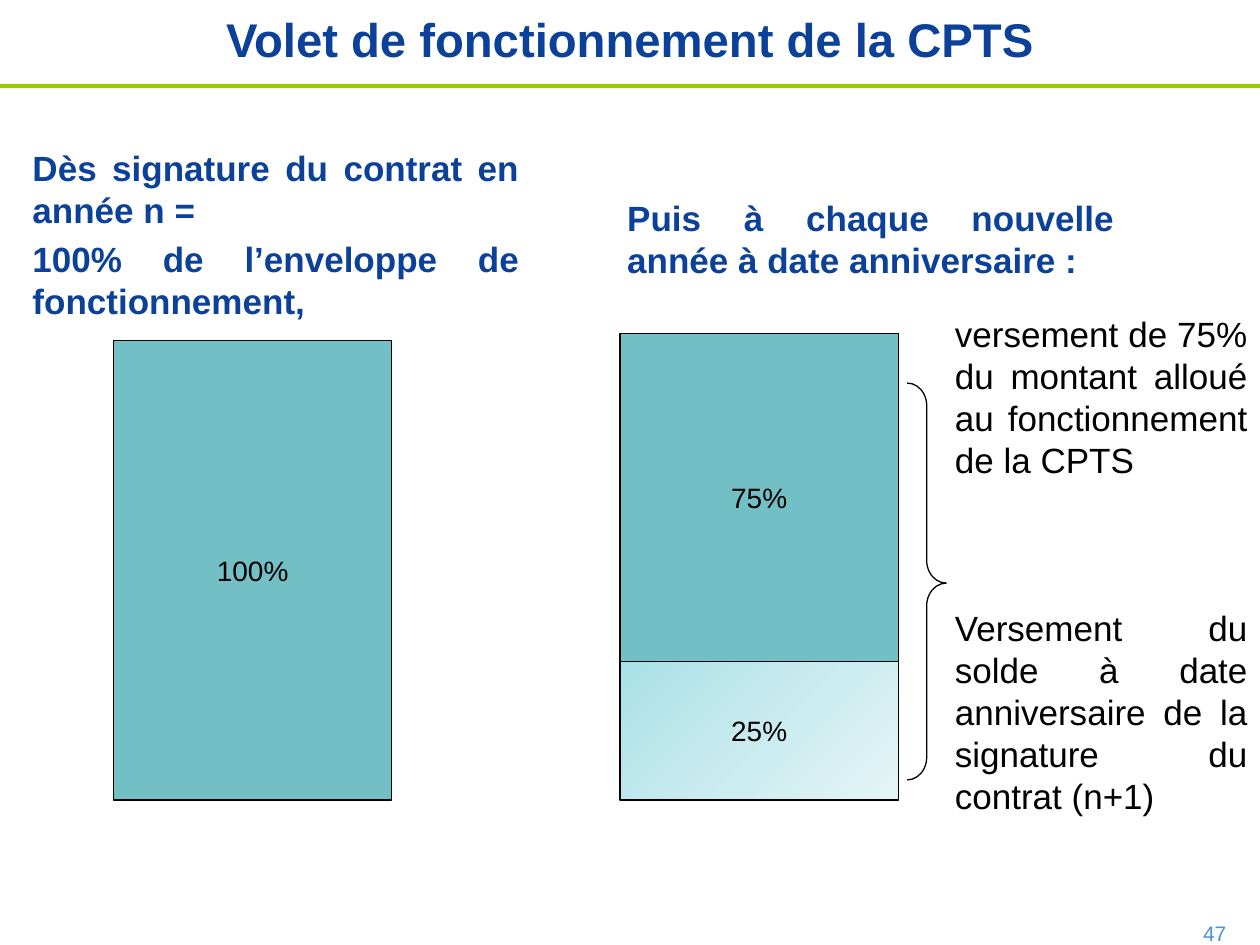
from copy import deepcopy

from pptx import Presentation
from pptx.dml.color import RGBColor
from pptx.enum.shapes import MSO_CONNECTOR, MSO_SHAPE
from pptx.enum.text import MSO_ANCHOR, PP_ALIGN
from pptx.oxml.ns import qn
from pptx.util import Inches, Pt

LEFT, CENTER, JUSTIFY = PP_ALIGN.LEFT, PP_ALIGN.CENTER, PP_ALIGN.JUSTIFY
TOP, MIDDLE = MSO_ANCHOR.TOP, MSO_ANCHOR.MIDDLE
RECTANGLE, BRACE = MSO_SHAPE.RECTANGLE, MSO_SHAPE.RIGHT_BRACE
STRAIGHT = MSO_CONNECTOR.STRAIGHT

BLUE, BLACK, GREEN, TEAL = "0C419A", "000000", "99CC00", "72BFC5"
LIGHT_GRADIENT = ["A7E1E7", "C9EBEF", "E4F5F6"]
HEADING = {"size": Pt(20), "bold": True}
BAR_WIDTH, BAR_BOTTOM = 2.21, 6.35


def color(hex_value):
    return RGBColor.from_string(hex_value)


def write_text(shape, lines, font, font_color, align, anchor=TOP, gap=0):
    frame = shape.text_frame
    frame.word_wrap = True
    frame.vertical_anchor = anchor
    for index, line in enumerate(lines):
        paragraph = frame.paragraphs[0] if index == 0 else frame.add_paragraph()
        paragraph.alignment = align
        if index:
            paragraph.space_before = Pt(gap)
        run = paragraph.add_run()
        run.text = line
        for name, value in {"name": "Arial", **font}.items():
            setattr(run.font, name, value)
        run.font.color.rgb = color(font_color)


def add_text(slide, box, lines, font, font_color, align, **layout):
    shape = slide.shapes.add_textbox(*map(Inches, box))
    write_text(shape, lines, font, font_color, align, **layout)


def add_outlined_shape(slide, kind, box):
    shape = slide.shapes.add_shape(kind, *map(Inches, box))
    shape.shadow.inherit = False
    shape.line.color.rgb = color(BLACK)
    shape.line.width = Pt(0.75)
    return shape


def fill_gradient(shape, hex_values):
    shape.fill.gradient()
    shape.fill.gradient_angle = 315
    # A new gradient has two stops; the middle one is inserted
    stop_list = shape.fill._fill._gradFill.find(qn("a:gsLst"))
    stop_list.insert(1, deepcopy(stop_list[0]))
    last = len(hex_values) - 1
    for index, (stop, hex_value) in enumerate(
            zip(shape.fill.gradient_stops, hex_values)):
        stop.color.rgb = color(hex_value)
        stop.position = index / last


def add_bar(slide, left, top, bottom, label, fill):
    box = (left, top, BAR_WIDTH, bottom - top)
    shape = add_outlined_shape(slide, RECTANGLE, box)
    if isinstance(fill, list):
        fill_gradient(shape, fill)
    else:
        shape.fill.solid()
        shape.fill.fore_color.rgb = color(fill)
    write_text(shape, [label], {"size": Pt(16)}, BLACK, CENTER, MIDDLE)


def add_brace(slide, box):
    brace = add_outlined_shape(slide, BRACE, box)
    brace.fill.background()
    brace.adjustments[0] = 0.58
    brace.adjustments[1] = 0.504


def add_rule(slide, y):
    rule = slide.shapes.add_connector(
        STRAIGHT, Inches(0), Inches(y), Inches(10), Inches(y))
    rule.line.color.rgb = color(GREEN)
    rule.line.width = Pt(2.25)
    properties = rule._element.spPr
    properties.append(properties.makeelement(qn("a:effectLst"), {}))


def main():
    presentation = Presentation()
    presentation.slide_width = Inches(10)
    presentation.slide_height = Inches(7.5)
    slide = presentation.slides.add_slide(presentation.slide_layouts[6])

    # Title, rule and page number
    add_rule(slide, 0.68)
    add_text(slide, (0, 0, 10, 0.61), ["Volet de fonctionnement de la CPTS"],
             {"size": Pt(27), "bold": True}, BLUE, CENTER, anchor=MIDDLE)
    add_text(slide, (9.45, 7.26, 0.55, 0.24), ["47"],
             {"size": Pt(12)}, "4993D7", LEFT)

    # First year
    add_text(slide, (0.16, 1.11, 4.06, 1.93),
             ["Dès signature du contrat en année n =",
              "100% de l’enveloppe de fonctionnement,"],
             HEADING, BLUE, JUSTIFY, gap=4)
    add_bar(slide, 0.9, 2.7, BAR_BOTTOM, "100%", TEAL)

    # Following years
    add_text(slide, (4.88, 1.51, 4.06, 1.93),
             ["Puis à chaque nouvelle année à date anniversaire :"],
             HEADING, BLUE, JUSTIFY)
    add_bar(slide, 4.92, 2.65, 5.25, "75%", TEAL)
    add_bar(slide, 4.92, 5.25, BAR_BOTTOM, "25%", LIGHT_GRADIENT)
    add_brace(slide, (7.2, 3.04, 0.31, 3.15))
    add_text(slide, (7.48, 2.43, 2.52, 4.14),
             ["versement de 75% du montant alloué au fonctionnement de la CPTS",
              "Versement du solde à date anniversaire de la signature "
              "du contrat (n+1)"],
             {"size": Pt(20)}, BLACK, JUSTIFY, gap=72)

    presentation.save("out.pptx")


if __name__ == "__main__":
    main()
